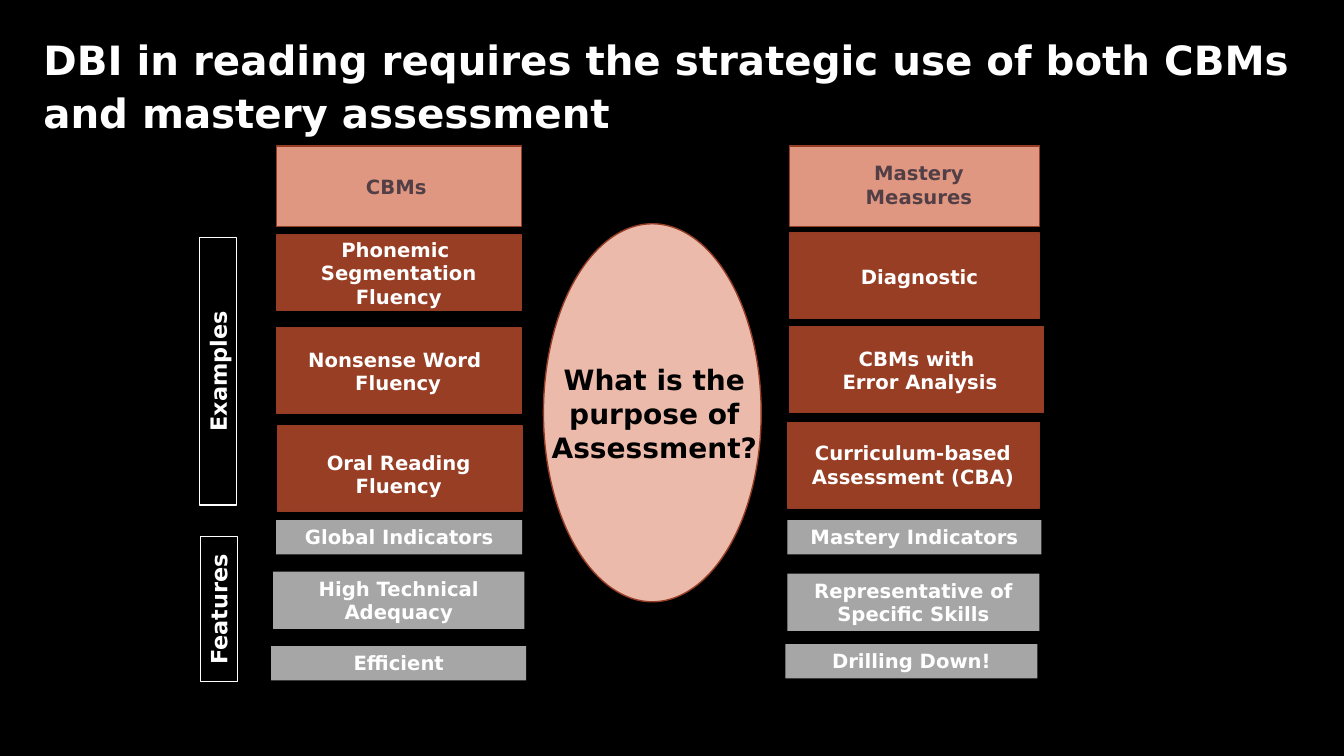
from dataclasses import dataclass

from pptx import Presentation
from pptx.dml.color import RGBColor
from pptx.enum.shapes import MSO_SHAPE
from pptx.enum.text import MSO_ANCHOR, MSO_AUTO_SIZE, PP_ALIGN
from pptx.util import Inches, Pt

FONT = "DejaVu Sans"
BLACK, WHITE = "000000", "FFFFFF"
RUST, RUST_EDGE = "973E25", "953D24"
SALMON, PALE_SALMON = "E09782", "EBBAAB"
GRAY, PLUM = "A6A6A6", "523F46"


@dataclass
class Panel:
    left: float
    top: float
    width: float
    height: float
    fill: str | None
    line: str | None = RUST_EDGE
    line_width: float = 1
    kind: MSO_SHAPE = MSO_SHAPE.RECTANGLE
    rotation: int = 0
    text: str = ""
    size: float = 14


@dataclass
class Label:
    left: float
    top: float
    width: float
    height: float
    text: str
    color: str = WHITE
    size: float = 14
    wrap: bool = True


def rgb(color: str) -> RGBColor:
    return RGBColor.from_string(color)


def write(frame, text: str, color: str, size: float, align=PP_ALIGN.CENTER) -> None:
    para = frame.paragraphs[0]
    para.text = text
    para.alignment = align
    para.font.name = FONT
    para.font.size = Pt(size)
    para.font.bold = True
    para.font.color.rgb = rgb(color)


def draw_panel(page, panel: Panel) -> None:
    box = page.shapes.add_shape(panel.kind, Inches(panel.left), Inches(panel.top),
                                Inches(panel.width), Inches(panel.height))
    box.shadow.inherit = False
    box.rotation = panel.rotation
    if panel.fill:
        box.fill.solid()
        box.fill.fore_color.rgb = rgb(panel.fill)
    else:
        box.fill.background()
    if panel.line:
        box.line.color.rgb = rgb(panel.line)
        box.line.width = Pt(panel.line_width)
    else:
        box.line.fill.background()
    if panel.text:
        box.text_frame.word_wrap = True
        box.text_frame.vertical_anchor = MSO_ANCHOR.TOP
        write(box.text_frame, panel.text, WHITE, panel.size)


def draw_label(page, label: Label) -> None:
    box = page.shapes.add_textbox(Inches(label.left), Inches(label.top),
                                  Inches(label.width), Inches(label.height))
    box.text_frame.word_wrap = label.wrap
    box.text_frame.auto_size = MSO_AUTO_SIZE.SHAPE_TO_FIT_TEXT
    write(box.text_frame, label.text, label.color, label.size)


def feature(left: float, top: float, width: float, height: float, text: str) -> Panel:
    return Panel(left, top, width, height, GRAY, None, text=text)


def side_tab(left: float, top: float, length: float, text: str) -> Panel:
    return Panel(left, top, length, 0.37, None, WHITE, 0.75,
                 rotation=270, text=text, size=16)


PANELS = [
    # Central question
    Panel(5.39, 2.22, 2.16, 3.75, PALE_SALMON, kind=MSO_SHAPE.OVAL),
    # Column headings
    Panel(2.74, 1.45, 2.43, 0.8, SALMON),
    Panel(7.83, 1.45, 2.48, 0.8, SALMON),
    # Examples
    Panel(2.74, 2.33, 2.43, 0.75, RUST),
    Panel(2.74, 3.25, 2.43, 0.85, RUST),
    Panel(2.75, 4.22, 2.43, 0.85, RUST),
    Panel(7.83, 2.31, 2.48, 0.85, RUST),
    Panel(7.83, 3.24, 2.52, 0.85, RUST),
    Panel(7.81, 4.19, 2.5, 0.85, RUST),
    # Features
    feature(2.74, 5.16, 2.44, 0.34, "Global Indicators"),
    feature(2.71, 5.67, 2.49, 0.57, "High Technical Adequacy"),
    feature(2.69, 6.41, 2.53, 0.34, "Efficient"),
    feature(7.81, 5.16, 2.52, 0.34, "Mastery Indicators"),
    feature(7.81, 5.69, 2.5, 0.57, "Representative of Specific Skills"),
    feature(7.79, 6.39, 2.5, 0.34, "Drilling Down!"),
    # Row names
    side_tab(0.84, 3.5, 2.65, "Examples"),
    side_tab(1.45, 5.86, 1.44, "Features"),
]

LABELS = [
    Label(5.33, 3.55, 2.32, 1.11, "What is the purpose of Assessment?", BLACK, 20),
    Label(2.74, 1.69, 2.38, 0.34, "CBMs", PLUM),
    Label(8.36, 1.55, 1.51, 0.57, "Mastery Measures", PLUM),
    Label(2.75, 2.31, 2.41, 0.81, "Phonemic \nSegmentation Fluency"),
    Label(2.95, 3.4, 2, 0.57, "Nonsense Word \nFluency", wrap=False),
    Label(3.14, 4.42, 1.63, 0.57, "Oral Reading\nFluency", wrap=False),
    Label(8.37, 2.58, 1.5, 0.34, "Diagnostic", wrap=False),
    Label(8.25, 3.39, 1.75, 0.57, "CBMs with \nError Analysis", wrap=False),
    Label(7.88, 4.33, 2.35, 0.57, "Curriculum-based Assessment (CBA)"),
]


def main() -> None:
    deck = Presentation()
    deck.slide_width, deck.slide_height = Inches(13.33), Inches(7.5)
    page = deck.slides.add_slide(deck.slide_layouts[5])
    page.background.fill.solid()
    page.background.fill.fore_color.rgb = rgb(BLACK)

    # Title
    title = page.shapes.title
    title.left, title.top = Inches(0.33), Inches(0.25)
    title.width, title.height = Inches(12.67), Inches(0.8)
    title.text_frame.word_wrap = True
    title.text_frame.vertical_anchor = MSO_ANCHOR.TOP
    write(title.text_frame,
          "DBI in reading requires the strategic use of both CBMs and mastery assessment",
          WHITE, 28.8, PP_ALIGN.LEFT)
    title.text_frame.paragraphs[0].line_spacing = 1.1

    # Diagram
    for panel in PANELS:
        draw_panel(page, panel)
    for label in LABELS:
        draw_label(page, label)

    deck.save("out.pptx")


if __name__ == "__main__":
    main()
